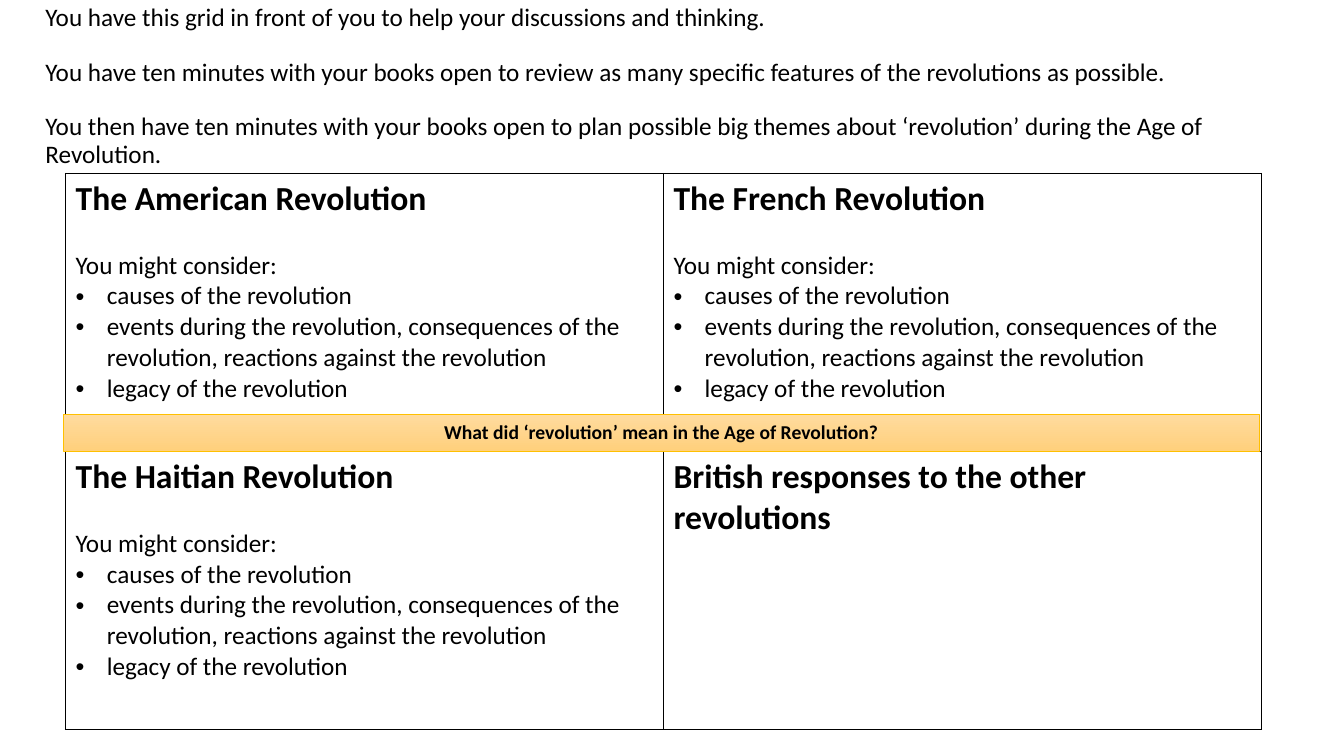
from dataclasses import dataclass
from pptx import Presentation
from pptx import util as u
from pptx.dml.color import RGBColor
from pptx.enum import shapes, text
from pptx.oxml.ns import qn
from lxml import etree


@dataclass(frozen=True)
class Theme:
    font: str = "Calibri"
    ink: str = "000000"
    accent: str = "FFC000"
    bar_top: str = "FFDB9E"
    bar_bottom: str = "FFD07C"
    heading: int = 24
    body: int = 18
    bar: int = 14


T = Theme()
WIDTH, HEIGHT = 13.33, 7.5
GRID_LEFT, GRID_TOP = 0.65, 1.72
COL, ROW = 5.93, 2.76
BAR_HEIGHT, BAR_SHIFT = 0.37, 0.02
INDENT = 0.31

INTRO = [
    "You have this grid in front of you to help your discussions and thinking.",
    "You have ten minutes with your books open to review as many specific features of the revolutions as possible.",
    "You then have ten minutes with your books open to plan possible big themes about ‘revolution’ during the Age of Revolution.",
]
PROMPT = "You might consider:"
POINTS = [
    "causes of the revolution",
    "events during the revolution, consequences of the revolution, reactions against the revolution",
    "legacy of the revolution",
]
TOPICS = [
    [("The American Revolution", True), ("The French Revolution", True)],
    [("The Haitian Revolution", True), ("British responses to the other revolutions", False)],
]
QUESTION = "What did ‘revolution’ mean in the Age of Revolution?"


def apply(obj, values):
    for name, value in values.items():
        setattr(obj, name, value)


def write(tf, items):
    for i, (words, size, bold, fmt) in enumerate(items):
        p = tf.paragraphs[0] if i == 0 else tf.add_paragraph()
        apply(p, fmt)
        r = p.add_run()
        r.text = words
        apply(r.font, {"name": T.font, "size": u.Pt(size), "bold": bold})
        r.font.color.rgb = RGBColor.from_string(T.ink)


def add_bullet(p):
    pPr = p._p.get_or_add_pPr()
    pPr.set("marL", str(u.Inches(INDENT)))
    pPr.set("indent", str(-u.Inches(INDENT)))
    etree.SubElement(pPr, qn("a:buFont"), typeface="Arial")
    etree.SubElement(pPr, qn("a:buChar"), char="•")


def add_borders(cell):
    tcPr = cell._tc.get_or_add_tcPr()
    for side in ("lnL", "lnR", "lnT", "lnB"):
        ln = etree.SubElement(tcPr, qn(f"a:{side}"), w=str(u.Pt(1)))
        fill = etree.SubElement(ln, qn("a:solidFill"))
        etree.SubElement(fill, qn("a:srgbClr"), val=T.ink)


def add_intro(s):
    sp = s.shapes.title
    apply(sp, {"left": u.Inches(0.35), "top": 0,
               "width": u.Inches(12.41), "height": u.Inches(1.45)})
    tf = sp.text_frame
    apply(tf, {"word_wrap": True, "auto_size": text.MSO_AUTO_SIZE.NONE,
               "vertical_anchor": text.MSO_ANCHOR.TOP})
    fmt = {"alignment": text.PP_ALIGN.LEFT, "line_spacing": 0.9,
           "space_before": u.Pt(0), "space_after": u.Pt(19.5)}
    write(tf, [(words, T.body, False, fmt) for words in INTRO])


def fill_topic(cell, heading, has_points):
    items = [(heading, T.heading, True, {"space_after": u.Pt(22 if has_points else 0)})]
    if has_points:
        items += [(words, T.body, False, {}) for words in [PROMPT, *POINTS]]
    write(cell.text_frame, items)
    for p in cell.text_frame.paragraphs[2:]:
        add_bullet(p)
    add_borders(cell)
    cell.fill.background()


def add_grid(s):
    tbl = s.shapes.add_table(2, 2, u.Inches(GRID_LEFT), u.Inches(GRID_TOP),
                             u.Inches(2 * COL), u.Inches(2 * ROW)).table
    apply(tbl, {"first_row": False, "horz_banding": False})
    for i, topics in enumerate(TOPICS):
        tbl.rows[i].height = u.Inches(ROW)
        for j, (heading, has_points) in enumerate(topics):
            fill_topic(tbl.cell(i, j), heading, has_points)


def add_bar(s):
    sp = s.shapes.add_shape(
        shapes.MSO_SHAPE.RECTANGLE, u.Inches(GRID_LEFT - BAR_SHIFT),
        u.Inches(GRID_TOP + ROW - BAR_HEIGHT), u.Inches(2 * COL), u.Inches(BAR_HEIGHT))
    sp.shadow.inherit = False
    sp.fill.gradient()
    sp.fill.gradient_angle = 270
    for stop, color in zip(sp.fill.gradient_stops, (T.bar_top, T.bar_bottom)):
        stop.color.rgb = RGBColor.from_string(color)
    sp.line.color.rgb = RGBColor.from_string(T.accent)
    sp.line.width = u.Pt(0.5)
    tf = sp.text_frame
    apply(tf, {"word_wrap": True, "vertical_anchor": text.MSO_ANCHOR.MIDDLE})
    write(tf, [(QUESTION, T.bar, True,
                {"alignment": text.PP_ALIGN.CENTER, "line_spacing": 0.9})])


def main():
    prs = Presentation()
    apply(prs, {"slide_width": u.Inches(WIDTH), "slide_height": u.Inches(HEIGHT)})
    s = prs.slides.add_slide(prs.slide_layouts[5])
    add_intro(s)
    add_grid(s)
    add_bar(s)
    prs.save("out.pptx")


if __name__ == "__main__":
    main()
